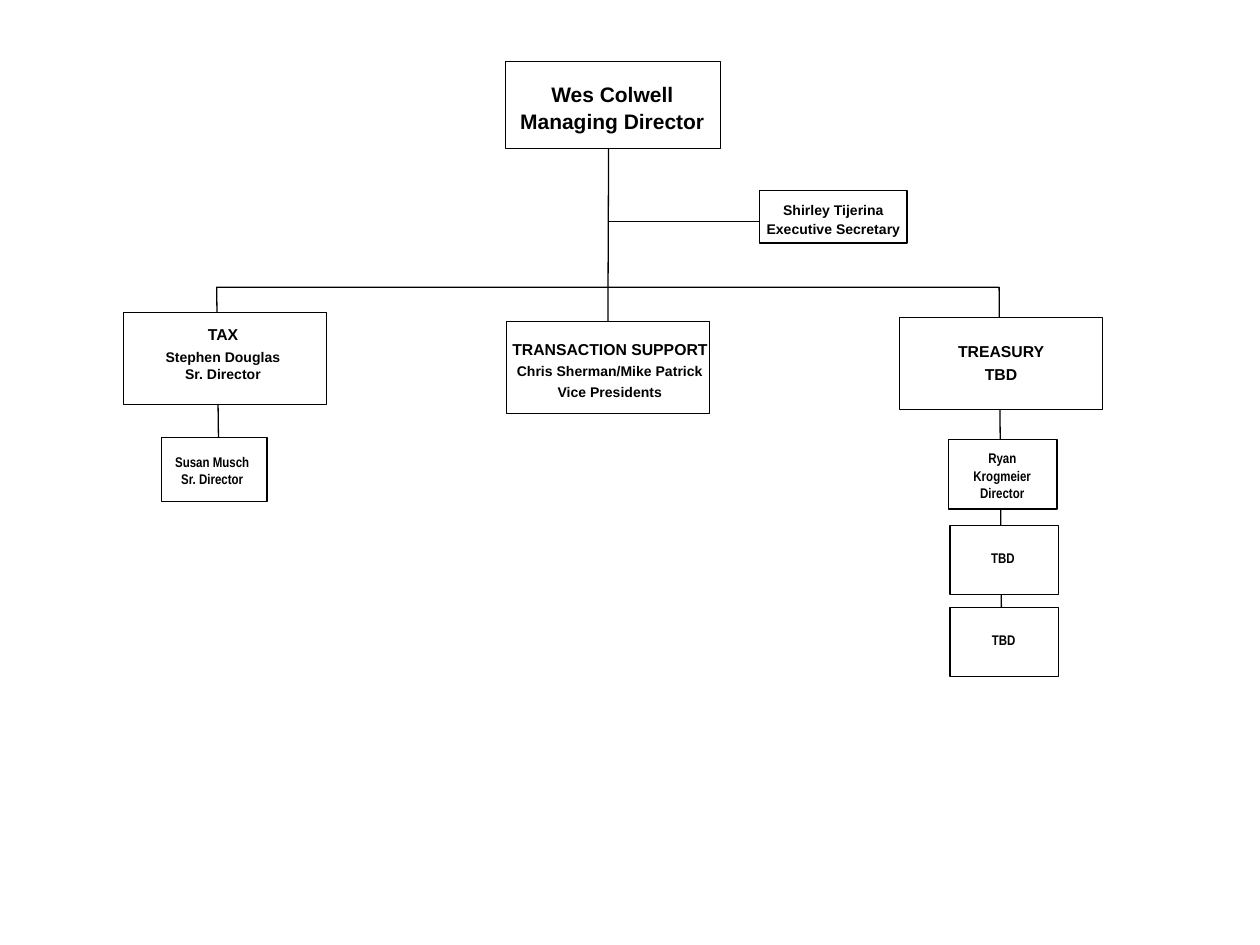
from pptx import Presentation
from pptx.dml.color import RGBColor
from pptx.enum.shapes import MSO_CONNECTOR, MSO_SHAPE
from pptx.enum.text import MSO_ANCHOR, MSO_AUTO_SIZE, PP_ALIGN
from pptx.oxml.ns import qn
from pptx.util import Inches, Pt
from lxml.etree import SubElement


def color(target, value):
    target.rgb = RGBColor.from_string(value)


def outline(sp):
    sp.line.width = Pt(0.75)
    color(sp.line.color, "000000")


prs = Presentation()
prs.slide_width, prs.slide_height = Inches(10), Inches(7.5)
s = prs.slides.add_slide(prs.slide_layouts[6])

fb = s.shapes.build_freeform(Inches(1.74), Inches(3.95), scale=1.0)
branch = [(1.72, 2.28), (7.93, 2.28), (7.95, 5.13)]
fb.add_line_segments([(Inches(x), Inches(y)) for x, y in branch], close=False)
sp = fb.convert_to_shape()
sp.shadow.inherit = False
sp.fill.background()
outline(sp)

arial, narrow = "Arial", "Arial Narrow"
boxes = [
    ("treasury", (7.14, 2.52, 1.61, 0.73), (7.15, 2.62, 1.59, 0.48), arial, 1.25,
     [[("TREASURY\nTBD", 9)]]),
    ("secretary", (6.03, 1.51, 1.17, 0.42), (6.06, 1.56, 1.11, 0.35), arial, 1.1,
     [[("Shirley Tijerina\nExecutive Secretary", 8)]]),
    ("managing", (4.01, 0.49, 1.71, 0.69), (3.84, 0.59, 2.04, 0.52), arial, 1.05,
     [[("Wes Colwell", 12)], [("Managing Director", 12)]]),
    ("krogmeier", (7.53, 3.49, 0.86, 0.55), (7.53, 3.51, 0.85, 0.52), narrow, 1.05,
     [[("Ryan Krogmeier", 8)], [("Director", 8)]]),
    ("open 1", (7.54, 4.17, 0.86, 0.55), (7.54, 4.33, 0.84, 0.22), narrow, 0.9,
     [[("TBD", 8)]]),
    ("open 2", (7.54, 4.82, 0.86, 0.55), (7.54, 4.98, 0.85, 0.22), narrow, 0.9,
     [[("TBD", 8)]]),
    ("transaction", (4.02, 2.55, 1.61, 0.73), (3.8, 2.61, 2.08, 0.62), arial, 1.25,
     [[("TRANSACTION SUPPORT\n", 9), ("Chris Sherman/Mike Patrick\nVice Presidents", 8)]]),
    ("tax", (0.98, 2.48, 1.61, 0.73), (0.98, 2.53, 1.58, 0.55), arial, 1.0,
     [[("TAX", 9)], [("Stephen Douglas\nSr. Director", 8)]]),
    ("musch", (1.28, 3.47, 0.84, 0.51), (1.06, 3.54, 1.25, 0.38), narrow, 1.05,
     [[("Susan Musch", 8)], [("Sr. Director", 8)]]),
]

rects = {}
for name, frame, text_frame, font, spacing, paragraphs in boxes:
    sp = s.shapes.add_shape(MSO_SHAPE.RECTANGLE, *[Inches(v) for v in frame])
    sp.shadow.inherit = False
    sp.fill.solid()
    color(sp.fill.fore_color, "FFFFFF")
    outline(sp)
    rects[name] = sp

    tf = s.shapes.add_textbox(*[Inches(v) for v in text_frame]).text_frame
    tf.word_wrap = True
    tf.vertical_anchor = MSO_ANCHOR.MIDDLE
    tf.auto_size = MSO_AUTO_SIZE.SHAPE_TO_FIT_TEXT
    if name == "secretary":
        tf.word_wrap = False
        tf.auto_size = MSO_AUTO_SIZE.NONE
        tf.margin_left = tf.margin_right = Inches(0.08)
        tf.margin_top = tf.margin_bottom = Inches(0.04)
    for i, runs in enumerate(paragraphs):
        p = tf.add_paragraph() if i else tf.paragraphs[0]
        p.alignment = PP_ALIGN.CENTER
        p.line_spacing = spacing
        if name == "tax" and i:
            p.space_before = Pt(2.5)
        if name == "managing" and i:
            p.space_after = Pt(3)
        for text, size in runs:
            for j, line in enumerate(text.split("\n")):
                if j:
                    p.add_line_break()
                if line:
                    r = p.add_run()
                    r.text = line
                    r.font.name, r.font.size, r.font.bold = font, Pt(size), True
                    color(r.font.color, "000000")

for x1, y1, x2, y2, target in [(4.83, 1.18, 4.83, 2.55, "transaction"),
                               (4.83, 1.76, 6.03, 1.76, None)]:
    line = s.shapes.add_connector(MSO_CONNECTOR.STRAIGHT, Inches(x1), Inches(y1),
                                  Inches(x2), Inches(y2))
    outline(line)
    SubElement(line._element.spPr, qn("a:effectLst"))
    if target:
        line.end_connect(rects[target], 0)

prs.save("out.pptx")
